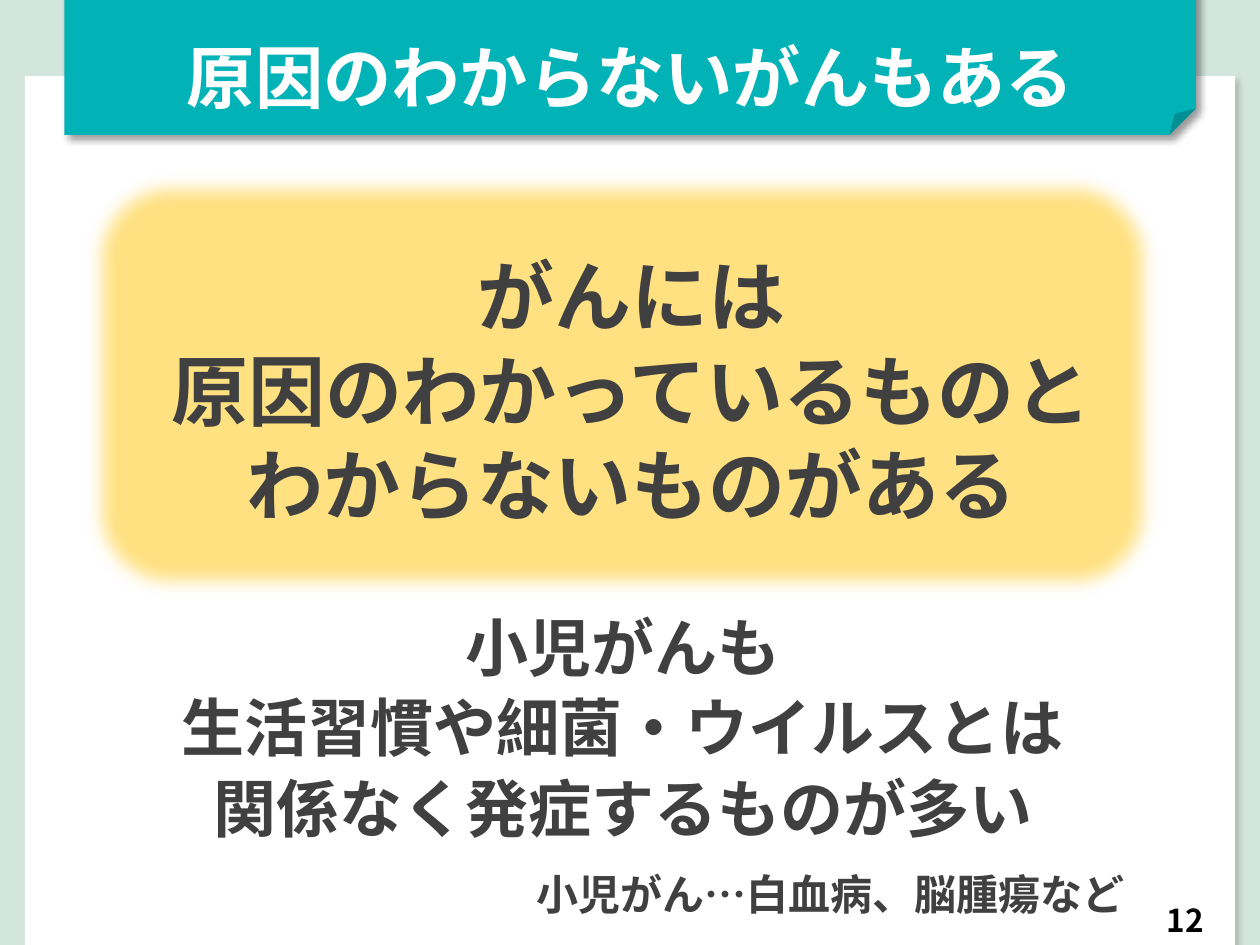
import dataclasses

import pptx
import pptx.dml.color
import pptx.enum.shapes
import pptx.enum.text
import pptx.oxml
import pptx.oxml.ns
import pptx.util

Cm = pptx.util.Cm
Pt = pptx.util.Pt
Kind = pptx.enum.shapes.MSO_SHAPE
Align = pptx.enum.text.PP_ALIGN
Anchor = pptx.enum.text.MSO_ANCHOR


@dataclasses.dataclass(frozen=True)
class Theme:
    mint: str = "D2E6DE"
    teal: str = "01B3B7"
    gold: str = "FFE181"
    white: str = "FFFFFF"
    ink: str = "404040"
    black: str = "000000"
    head: int = 39
    lead: int = 44
    body: int = 36
    note: int = 24
    page: int = 18
    latin: str = "League Spartan"
    asian: str = "Noto Sans CJK JP"


theme = Theme()


def color(code):
    return pptx.dml.color.RGBColor.from_string(code)


def effect(shape, inner):
    shape.shadow.inherit = False
    space = pptx.oxml.ns.nsdecls("a")
    node = pptx.oxml.parse_xml(f"<a:effectLst {space}>{inner}</a:effectLst>")
    old = shape.element.spPr.find(pptx.oxml.ns.qn("a:effectLst"))
    old.getparent().replace(old, node)


def shadow(shape, alpha, blur, dist):
    effect(shape, f'<a:outerShdw blurRad="{Pt(blur)}" dist="{Pt(dist)}" dir="2700000" '
                  f'algn="tl" rotWithShape="0"><a:srgbClr val="{theme.black}">'
                  f'<a:alpha val="{alpha * 1000}"/></a:srgbClr></a:outerShdw>')


def panel(shapes, kind, box, fill=None):
    shape = shapes.add_shape(kind, *map(Cm, box))
    shape.shadow.inherit = False
    shape.line.fill.background()
    if fill:
        shape.fill.solid()
        shape.fill.fore_color.rgb = color(fill)
    else:
        shape.fill.background()
    return shape


def style(run, size, tint, font, track):
    run.font.size = Pt(size)
    run.font.bold = True
    run.font.color.rgb = color(tint)
    run.font.name = font
    props = run.font._element
    asian = props.makeelement(pptx.oxml.ns.qn("a:ea"), {"typeface": theme.asian})
    props.find(pptx.oxml.ns.qn("a:latin")).addnext(asian)
    if track:
        props.set("spc", str(track * 100))


def write(shape, *paras, size, tint=theme.ink, font=theme.latin,
          align=Align.CENTER, anchor=Anchor.TOP, pitch=None):
    frame = shape.text_frame
    frame.word_wrap = True
    frame.auto_size = pptx.enum.text.MSO_AUTO_SIZE.NONE
    frame.vertical_anchor = anchor
    for i, para in enumerate(paras):
        line = frame.add_paragraph() if i else frame.paragraphs[0]
        line.alignment = align
        if pitch:
            line.line_spacing = Pt(pitch)
        for text, track in [(para, 0)] if isinstance(para, str) else para:
            for j, part in enumerate(text.split("\n")):
                if j:
                    line.add_line_break()
                run = line.add_run()
                run.text = part
                style(run, size, tint, font, track)


def label(shapes, box, *paras, **form):
    write(shapes.add_textbox(*map(Cm, box)), *paras, **form)


def title(slide, box, text):
    head = slide.shapes.title
    head.left, head.top, head.width, head.height = map(Cm, box)
    write(head, text, size=theme.head, tint=theme.white, anchor=Anchor.MIDDLE)
    slide.shapes._spTree.append(head.element)


def frame(slide):
    back = slide.background.fill
    back.solid()
    back.fore_color.rgb = color(theme.mint)
    sheet = panel(slide.shapes, Kind.RECTANGLE, (0.5, 1.53, 24.4, 17.96), theme.white)
    shadow(sheet, 18, 3, 4)
    band = panel(slide.shapes, Kind.FOLDED_CORNER, (1.3, -0.48, 22.81, 3.2), theme.teal)
    shadow(band, 40, 4, 3)


def card(slide):
    group = slide.shapes.add_group_shape().shapes
    glow = panel(group, Kind.ROUNDED_RECTANGLE, (1.73, 3.48, 21.64, 8.56), theme.gold)
    effect(glow, f'<a:softEdge rad="{Pt(10)}"/>')
    label(group, (2.34, 4.85, 20.8, 6.02),
          "がんには\n原因のわかっているものと", "わからないものがある",
          size=theme.lead, pitch=54)


def main():
    deck = pptx.Presentation()
    deck.slide_width, deck.slide_height = Cm(25.4), Cm(19.05)
    slide = deck.slides.add_slide(deck.slide_layouts[5])
    frame(slide)
    label(slide.shapes, (3, 12.04, 19.1, 5.16),
          "小児がんも",
          [("生活習慣や細", 0), ("菌", -7), ("・", -10), ("ウイルスとは", 0)],
          "関係なく発症するものが多い",
          size=theme.body, pitch=46)
    title(slide, (0.91, 0.56, 23.6, 1.96), "原因のわからないがんもある")
    card(slide)
    note = panel(slide.shapes, Kind.ROUNDED_RECTANGLE, (10.49, 17.3, 12.65, 1.42))
    write(note, "小児がん…白血病、脳腫瘍など", size=theme.note, font=theme.asian,
          align=Align.LEFT, anchor=Anchor.MIDDLE)
    label(slide.shapes, (22.99, 17.98, 1.8, 1.12), "12", size=theme.page,
          tint=theme.black, font=theme.asian, anchor=Anchor.MIDDLE)
    deck.save("out.pptx")


if __name__ == "__main__":
    main()
